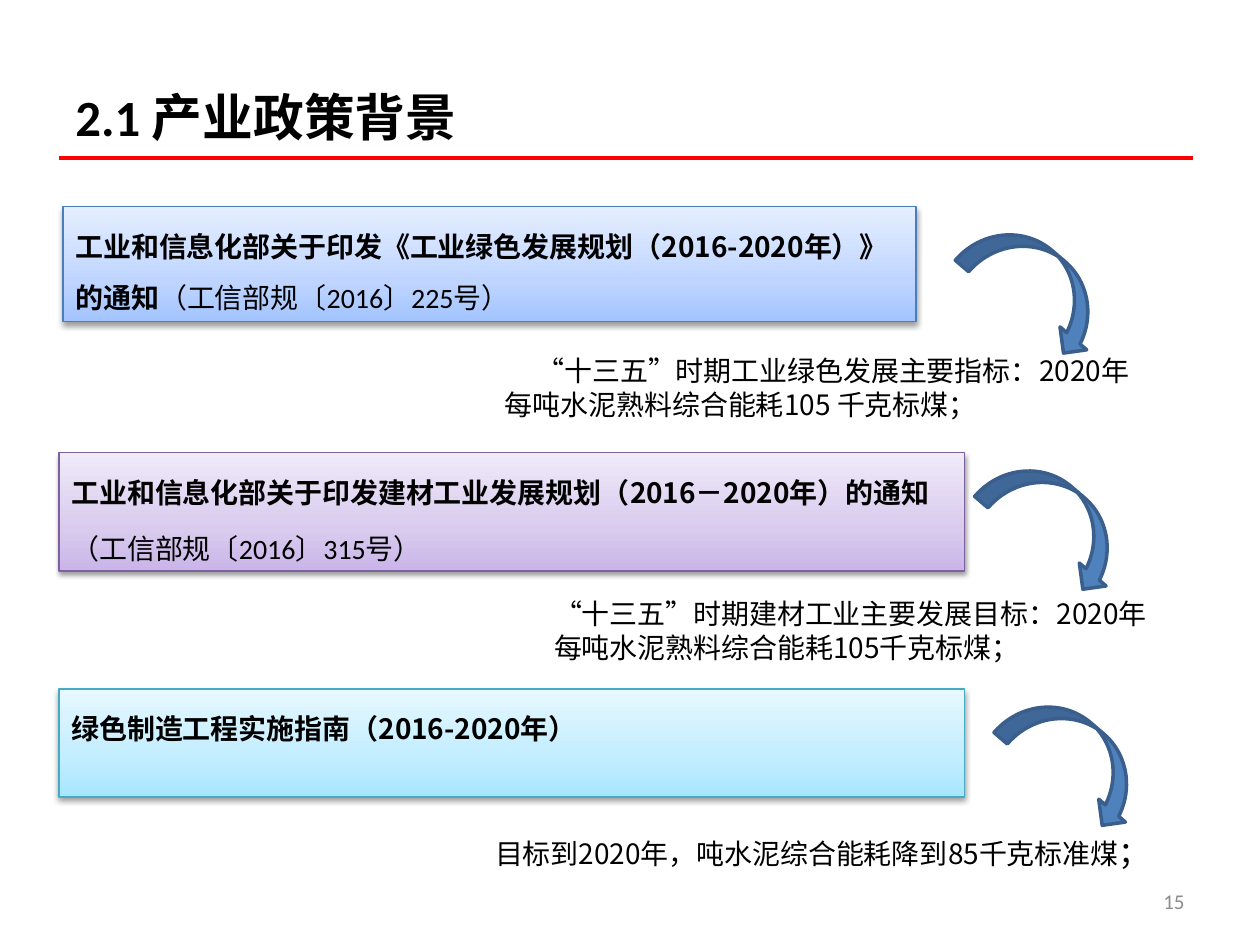
"""Build the slide on the industrial policy background."""
import copy
import dataclasses

import pptx
import pptx.dml.color
import pptx.enum.shapes
import pptx.enum.text
import pptx.oxml.ns
import pptx.util
from lxml import etree

Cm = pptx.util.Cm
Pt = pptx.util.Pt
qn = pptx.oxml.ns.qn


@dataclasses.dataclass(frozen=True)
class Theme:
    black: str = "000000"
    grey: str = "8C8C8C"
    rule: str = "FF0000"
    arrow: str = "4F81BD"
    arrow_line: str = "3A5F8C"
    blue: tuple = ("A3C4FF", "BFD5FF", "E5EEFF")
    blue_line: str = "4A7EBB"
    purple: tuple = ("C9B5E8", "D8CBEE", "F0EAF9")
    purple_line: str = "7D60A0"
    cyan: tuple = ("A7E6FF", "C1EDFF", "E7F8FF")
    cyan_line: str = "46AAC5"
    latin: str = "Calibri"
    heading: str = "Noto Sans CJK SC"
    note: str = "Noto Sans CJK JP"
    title_size: int = 29
    wide_size: int = 18
    body_size: int = 16
    number_size: int = 12


def rgb(value):
    return pptx.dml.color.RGBColor.from_string(value)


class SlideBuilder:
    def __init__(self, slide, theme):
        self.slide = slide
        self.theme = theme

    def add_span(self, para, text, size, font, color=None, bold=False):
        span = para.add_run()
        span.text = text
        span.font.size = Pt(size)
        span.font.name = font
        span.font.bold = bold
        span.font.color.rgb = rgb(color or self.theme.black)
        east_asian = self.theme.heading if font == self.theme.latin else font
        etree.SubElement(span.font._element, qn("a:ea"), typeface=east_asian)

    def add_text(self, place, spans, align="LEFT", anchor="TOP"):
        box = self.slide.shapes.add_textbox(*map(Cm, place))
        frame = box.text_frame
        frame.word_wrap = True
        frame.vertical_anchor = pptx.enum.text.MSO_ANCHOR[anchor]
        para = frame.paragraphs[0]
        para.alignment = pptx.enum.text.PP_ALIGN[align]
        for span in spans:
            self.add_span(para, *span)

    def add_rule(self, left, right, top):
        line = self.slide.shapes.add_connector(
            pptx.enum.shapes.MSO_CONNECTOR.STRAIGHT, Cm(left), Cm(top), Cm(right), Cm(top))
        line.line.color.rgb = rgb(self.theme.rule)
        line.line.width = Pt(2.5)
        etree.SubElement(line._element.spPr, qn("a:effectLst"))

    def add_shape(self, kind, place, line_color, line_width):
        shape = self.slide.shapes.add_shape(
            pptx.enum.shapes.MSO_SHAPE[kind], *map(Cm, place))
        shape.shadow.inherit = False
        shape.line.color.rgb = rgb(line_color)
        shape.line.width = Pt(line_width)
        return shape

    def add_arrow(self, left, top):
        arrow = self.add_shape("CURVED_DOWN_ARROW", (left, top, 3.23, 1.42),
                               self.theme.arrow_line, 2)
        arrow.rotation = 40.6
        arrow.fill.solid()
        arrow.fill.fore_color.rgb = rgb(self.theme.arrow)

    def add_policy(self, place, colors, line_color, paragraphs, hanging=0.97):
        panel = self.add_shape("RECTANGLE", place, line_color, 0.75)
        self.fill_gradient(panel, colors)
        self.drop_shadow(panel)
        frame = panel.text_frame
        frame.word_wrap = True
        frame.margin_right = Cm(0.05)
        frame.vertical_anchor = pptx.enum.text.MSO_ANCHOR.TOP
        for index, spans in enumerate(paragraphs):
            para = frame.add_paragraph() if index else frame.paragraphs[0]
            para.alignment = pptx.enum.text.PP_ALIGN.LEFT
            para.line_spacing = 1.5
            para.space_before = Pt(3.2)
            properties = para._p.get_or_add_pPr()
            properties.set("marL", str(Cm(hanging)))
            properties.set("indent", str(-Cm(hanging)))
            for span in spans:
                self.add_span(para, *span)

    def fill_gradient(self, shape, colors):
        shape.fill.gradient()
        shape.fill.gradient_angle = 90
        stop_list = shape._element.spPr.find(".//" + qn("a:gsLst"))
        stop_list.append(copy.deepcopy(stop_list[0]))
        for stop, color, position in zip(shape.fill.gradient_stops, colors, (0, 0.35, 1)):
            stop.color.rgb = rgb(color)
            stop.position = position

    def drop_shadow(self, shape):
        effects = shape._element.spPr.find(qn("a:effectLst"))
        shadow = etree.SubElement(
            effects, qn("a:outerShdw"), blurRad=str(Pt(3.1)), dist=str(Pt(1.6)),
            dir="5400000", rotWithShape="0")
        color = etree.SubElement(shadow, qn("a:srgbClr"), val=self.theme.black)
        etree.SubElement(color, qn("a:alpha"), val="38000")


def main():
    theme = Theme()
    deck = pptx.Presentation()
    deck.slide_width, deck.slide_height = Cm(25.4), Cm(19.05)
    page = SlideBuilder(deck.slides.add_slide(deck.slide_layouts[6]), theme)

    def strong(text):
        return text, theme.body_size, theme.heading, theme.black, True

    def plain(text):
        return text, theme.body_size, theme.latin

    def note(text):
        return text, theme.body_size, theme.note

    def wide(text):
        return text, theme.wide_size, theme.latin

    page.add_text((1.27, 0.76, 22.86, 3.18),
                  [("2.1 产业政策背景", theme.title_size, theme.latin, theme.black, True)],
                  anchor="MIDDLE")
    page.add_rule(1.19, 24.05, 3.18)

    page.add_policy((1.27, 4.17, 17.2, 2.31), theme.blue, theme.blue_line,
                    [[strong("工业和信息化部关于印发《工业绿色发展规划（2016-2020年）》的通知"),
                      plain("（工信部规〔2016〕225号）")]], hanging=0)
    page.add_policy((1.19, 9.12, 18.26, 2.39), theme.purple, theme.purple_line,
                    [[strong("工业和信息化部关于印发建材工业发展规划（2016－2020年）的通知")],
                     [plain("（工信部规〔2016〕315号）")]])
    page.add_policy((1.19, 13.89, 18.26, 2.18), theme.cyan, theme.cyan_line,
                    [[strong("绿色制造工程实施指南（2016-2020年）")]])

    page.add_text((9.93, 6.93, 13.11, 1.7),
                  [wide("　"), note("“十三五”时期工业绿色发展主要指标：2020年每吨水泥熟料综合能耗105 千克标煤；")])
    page.add_text((10.92, 11.91, 12.7, 1.63),
                  [note("“十三五”时期建材工业主要发展目标：2020年每吨水泥熟料综合能耗105千克标煤；")])
    page.add_text((9.73, 16.66, 14.68, 1.02),
                  [note("目标到2020年，吨水泥综合能耗降到85千克标准煤"), wide("；")])

    for row in range(3):
        page.add_arrow(19.33 + 0.39 * row, 5.05 + 4.76 * row)

    page.add_text((18.21, 17.65, 5.92, 1.02),
                  [("15", theme.number_size, theme.latin, theme.grey)],
                  align="RIGHT", anchor="MIDDLE")
    deck.save("out.pptx")


if __name__ == "__main__":
    main()
